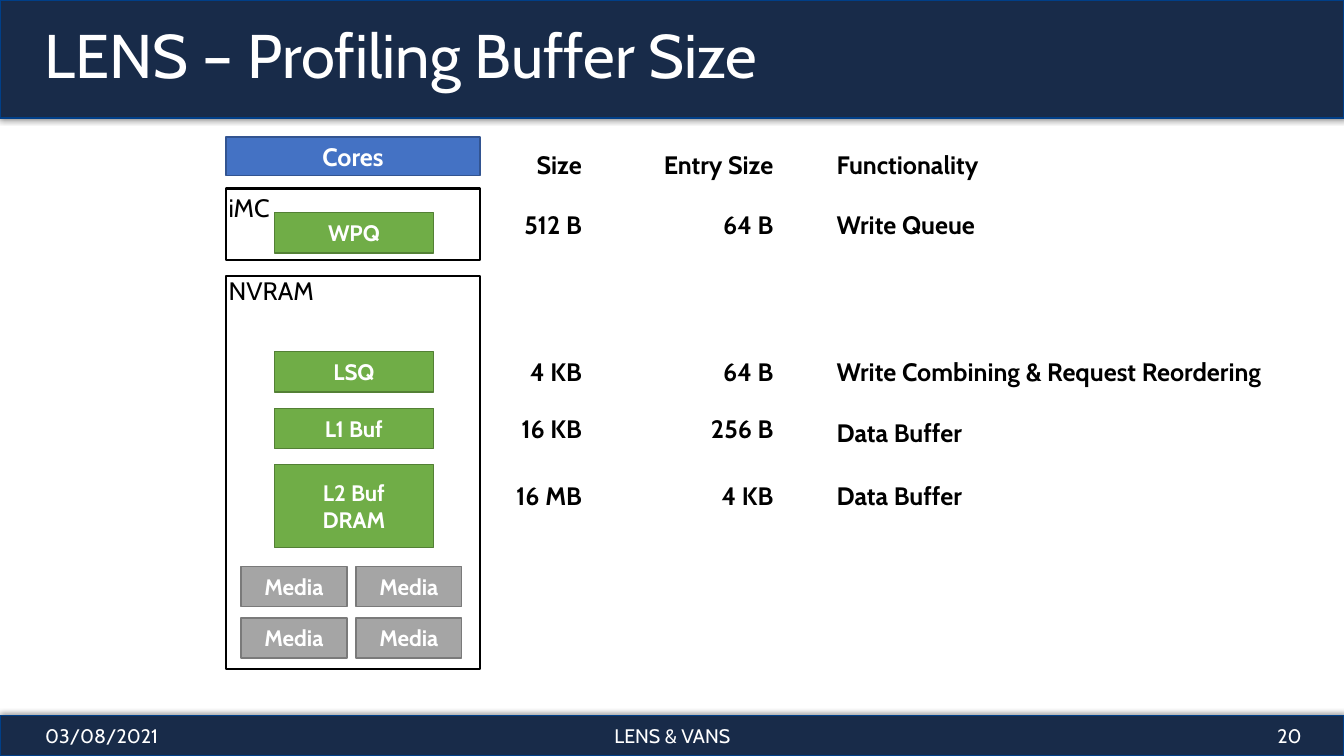
from dataclasses import dataclass
from itertools import product

from lxml.etree import SubElement
from pptx import Presentation
from pptx.dml.color import RGBColor as Rgb
from pptx.enum.shapes import MSO_SHAPE as Shape
from pptx.enum.text import MSO_ANCHOR as Anchor, MSO_AUTO_SIZE as AutoSize, PP_ALIGN as Align
from pptx.oxml.ns import qn
from pptx.util import Inches, Pt


@dataclass(frozen=True)
class Theme:
    font: str = "Cabin"
    white: str = "FFFFFF"
    black: str = "000000"
    navy: tuple = ("182B49", "003F88")
    blue: tuple = ("4472C4", "325491")
    green: tuple = ("70AD47", "538035")
    gray: tuple = ("A5A5A5", "7A7A7A")
    frame: tuple = ("FFFFFF", "000000")
    title: int = 44
    body: int = 18
    block: int = 16
    footer: int = 14


theme = Theme()
WIDTH, HEIGHT = 13.33, 7.5
HEADER, FOOTER, ROW = 1.17, 0.4, 0.4
FRAME_LEFT, FRAME_WIDTH = 2.24, 2.52
BUFFER_LEFT, BUFFER_WIDTH = 2.72, 1.58
MEDIA_LEFT, MEDIA_TOP, MEDIA_WIDTH = 2.39, 5.62, 1.05
MEDIA_STEP_X, MEDIA_STEP_Y = 1.14, 0.51

deck = Presentation()
deck.slide_width, deck.slide_height = Inches(WIDTH), Inches(HEIGHT)
slide = deck.slides.add_slide(deck.slide_layouts[5])


def write(holder, text, size, color, align=Align.LEFT, bold=False, anchor=Anchor.MIDDLE):
    frame = holder.text_frame
    frame.word_wrap, frame.auto_size = True, AutoSize.NONE
    frame.vertical_anchor = anchor
    for index, line in enumerate(text.split("\n")):
        paragraph = frame.paragraphs[0] if index == 0 else frame.add_paragraph()
        paragraph.alignment = align
        run = paragraph.add_run()
        run.text = line
        run.font.name, run.font.size, run.font.bold = theme.font, Pt(size), bold
        run.font.color.rgb = Rgb.from_string(color)


def box(left, top, width, height, colors, line_width=1):
    shape = slide.shapes.add_shape(Shape.RECTANGLE, *map(Inches, (left, top, width, height)))
    shape.shadow.inherit = False
    shape.fill.solid()
    shape.fill.fore_color.rgb = Rgb.from_string(colors[0])
    shape.line.color.rgb = Rgb.from_string(colors[1])
    shape.line.width = Pt(line_width)
    return shape


for top, height, angle in ((HEIGHT - FOOTER, FOOTER, 270), (0, HEADER, 90)):
    band = box(0, top, WIDTH, height, theme.navy)
    effects = band.element.spPr.find(qn("a:effectLst"))
    shadow = SubElement(effects, qn("a:outerShdw"), blurRad=str(Pt(4)), dist=str(Pt(1)),
                        dir=str(angle * 60000), rotWithShape="0")
    shade = SubElement(shadow, qn("a:srgbClr"), val=theme.black)
    SubElement(shade, qn("a:alpha"), val="40000")

title = slide.shapes.title
slide.shapes.element.append(title.element)
title.left, title.top, title.width, title.height = map(Inches, (0.34, 0.05, 12.67, 1.07))
write(title, "LENS – Profiling Buffer Size", theme.title, theme.white)
title.text_frame.paragraphs[0].line_spacing = 0.9

for text, left, width, align in (
    ("03/08/2021", 0.35, 3, Align.LEFT),
    ("LENS & VANS", 4.42, 4.5, Align.CENTER),
    ("20", 10.01, 3, Align.RIGHT),
):
    note = slide.shapes.add_textbox(*map(Inches, (left, HEIGHT - FOOTER, width, FOOTER)))
    write(note, text, theme.footer, theme.white, align)

cores = box(FRAME_LEFT, 1.36, FRAME_WIDTH, 0.38, theme.blue)
write(cores, "Cores", theme.body, theme.white, Align.CENTER, True)

for text, top, height, label_top in (("iMC", 1.87, 0.71, 1.86), ("NVRAM", 2.74, 3.9, 2.68)):
    box(FRAME_LEFT, top, FRAME_WIDTH, height, theme.frame, 1.5)
    label = slide.shapes.add_textbox(*map(Inches, (2.17, label_top, BUFFER_WIDTH, ROW)))
    write(label, text, theme.body, theme.black, anchor=Anchor.TOP)

for text, top, height in (
    ("WPQ", 2.11, ROW),
    ("LSQ", 3.49, ROW),
    ("L1 Buf", 4.05, ROW),
    ("L2 Buf\nDRAM", 4.61, 0.82),
):
    buffer = box(BUFFER_LEFT, top, BUFFER_WIDTH, height, theme.green)
    write(buffer, text, theme.block, theme.white, Align.CENTER, True)

for row, column in product(range(2), repeat=2):
    media = box(MEDIA_LEFT + column * MEDIA_STEP_X, MEDIA_TOP + row * MEDIA_STEP_Y,
                MEDIA_WIDTH, ROW, theme.gray)
    write(media, "Media", theme.block, theme.white, Align.CENTER, True)

columns = ((4.8, 1.07, Align.RIGHT), (6.2, 1.57, Align.RIGHT), (8.2, 5.13, Align.LEFT))
for tops, texts in (
    ((1.43, 1.43, 1.43), ("Size", "Entry Size", "Functionality")),
    ((2.03, 2.03, 2.03), ("512 B", "64 B", "Write Queue")),
    ((3.49, 3.49, 3.49), ("4 KB", "64 B", "Write Combining & Request Reordering")),
    ((4.05, 4.05, 4.09), ("16 KB", "256 B", "Data Buffer")),
    ((4.72, 4.72, 4.72), ("16 MB", "4 KB", "Data Buffer")),
):
    for (left, width, align), top, text in zip(columns, tops, texts):
        entry = slide.shapes.add_textbox(*map(Inches, (left, top, width, ROW)))
        write(entry, text, theme.body, theme.black, align, True, Anchor.TOP)

deck.save("out.pptx")
